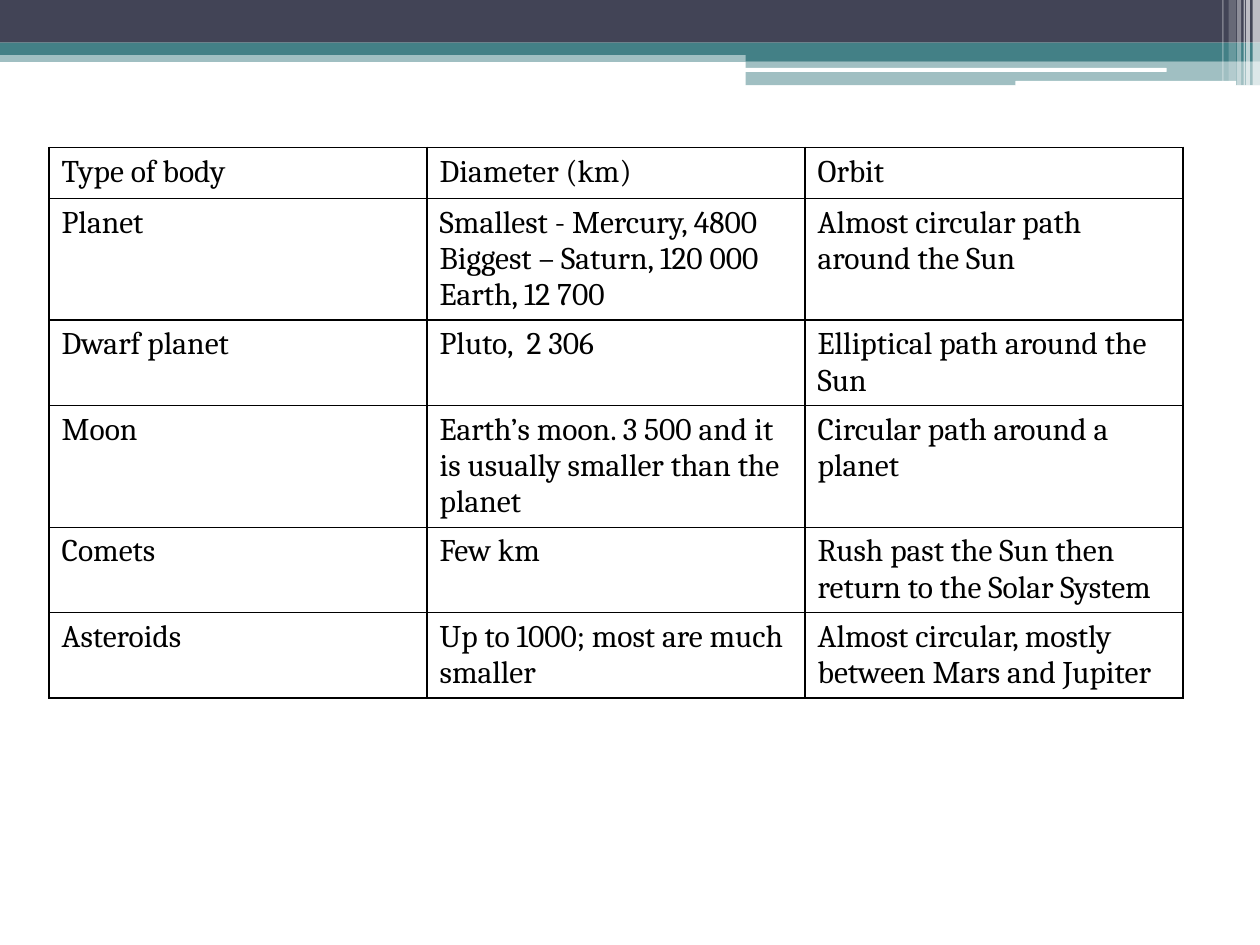
from lxml import etree
from pptx import Presentation
from pptx import util as u
from pptx.dml import color
from pptx.enum import shapes
from pptx.oxml import ns

COLORS = {"navy": "424456", "teal": "438086", "white": "FFFFFF", "black": "000000"}
FONT = "Cambria"

# left, top, width, height in cm, colour, opacity in percent
HEADER_BANDS = [
    (0, 1.02, 25.4, 0.23, "teal", 50),
    (0, 0, 25.4, 0.86, "navy", 100),
    (0, 0.86, 25.4, 0.25, "teal", 100),
    (15.03, 0.99, 10.37, 0.24, "teal", 100),
    (15.03, 1.23, 10.37, 0.49, "teal", 50),
]
ROUNDED_LINES = [
    (15.01, 1.37, 8.51, 0.08, "white", 100),
    (20.47, 1.63, 4.45, 0.1, "white", 100),
]
# left, width, height in cm, opacity in percent
EDGE_STRIPES = [
    (25.25, 0.15, 1.73, 65),
    (25.12, 0.08, 1.73, 65),
    (25.07, 0.03, 1.73, 60),
    (24.94, 0.08, 1.73, 40),
    (24.77, 0.15, 1.63, 20),
    (24.64, 0.03, 1.63, 30),
]

BODIES = [
    ("Type of body", "Diameter (km)", "Orbit"),
    ("Planet",
     "Smallest - Mercury, 4800\nBiggest – Saturn, 120 000\nEarth, 12 700",
     "Almost circular path around the Sun"),
    ("Dwarf planet", "Pluto,  2 306", "Elliptical path around the Sun"),
    ("Moon",
     "Earth’s moon. 3 500 and it is usually smaller than the planet",
     "Circular path around a planet"),
    ("Comets", "Few km", "Rush past the Sun then return to the Solar System"),
    ("Asteroids", "Up to 1000; most are much smaller",
     "Almost circular, mostly between Mars and Jupiter"),
]


def rgb(name):
    return color.RGBColor.from_string(COLORS[name])


def add_band(slide, left, top, width, height, fill, opacity,
             kind=shapes.MSO_SHAPE.RECTANGLE):
    shape = slide.shapes.add_shape(
        kind, u.Cm(left), u.Cm(top), u.Cm(width), u.Cm(height))
    shape.shadow.inherit = False
    shape.line.fill.background()
    shape.fill.solid()
    shape.fill.fore_color.rgb = rgb(fill)
    if opacity < 100:
        solid = shape.fill._xPr.find(ns.qn("a:solidFill"))
        etree.SubElement(solid[0], ns.qn("a:alpha"), val=str(opacity * 1000))


def add_header(slide):
    for band in HEADER_BANDS:
        add_band(slide, *band)
    for line in ROUNDED_LINES:
        add_band(slide, *line, kind=shapes.MSO_SHAPE.ROUNDED_RECTANGLE)
    for left, width, height, opacity in EDGE_STRIPES:
        add_band(slide, left, 0, width, height, "white", opacity)


def set_borders(cell):
    properties = cell._tc.get_or_add_tcPr()
    for index, side in enumerate(("lnL", "lnR", "lnT", "lnB")):
        line = etree.Element(ns.qn(f"a:{side}"), w=str(u.Pt(1)))
        solid = etree.SubElement(line, ns.qn("a:solidFill"))
        etree.SubElement(solid, ns.qn("a:srgbClr"), val=COLORS["black"])
        properties.insert(index, line)


def fill_cell(cell, words):
    cell.text_frame.text = words
    for paragraph in cell.text_frame.paragraphs:
        for run in paragraph.runs:
            run.font.name = FONT
            run.font.size = u.Pt(18)
            run.font.bold = False
            run.font.color.rgb = rgb("black")
    cell.fill.background()
    set_borders(cell)


def add_body_table(slide):
    height = u.Cm(14.5)
    frame = slide.shapes.add_table(
        len(BODIES), len(BODIES[0]), u.Cm(0.99), u.Cm(2.97), u.Cm(22.86), height)
    table = frame.table
    table.first_row = False
    table.horz_banding = False
    for row, texts in zip(table.rows, BODIES):
        row.height = u.Cm(1.03)  # rows grow with their text
        for cell, words in zip(row.cells, texts):
            fill_cell(cell, words)
    frame.height = height


def main():
    presentation = Presentation()
    presentation.slide_width = u.Cm(25.4)
    presentation.slide_height = u.Cm(19.05)
    slide = presentation.slides.add_slide(presentation.slide_layouts[6])
    add_header(slide)
    add_body_table(slide)
    presentation.save("out.pptx")


if __name__ == "__main__":
    main()
